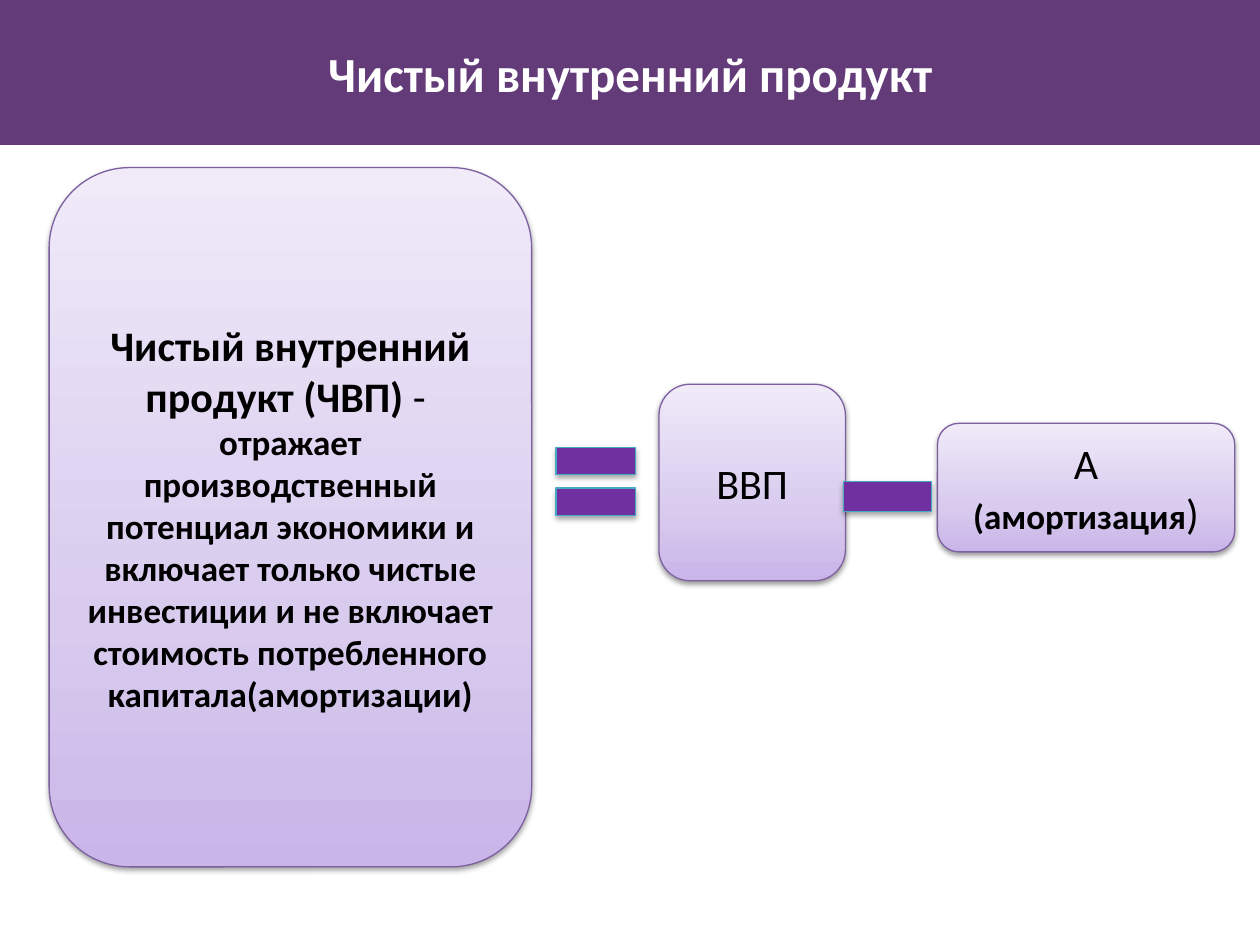
from copy import deepcopy

from lxml import etree
from pptx import Presentation
from pptx import util as u
from pptx.dml.color import RGBColor
from pptx.enum import shapes, text
from pptx.oxml.ns import qn

FONT = "Calibri"
LILAC_STOPS = [(0, "C9B5E8"), (0.35, "D8CBEE"), (1, "F0EAF9")]


def rgb(value):
    return RGBColor.from_string(value)


def place(shape, left, top, width, height):
    shape.left, shape.top = u.Inches(left), u.Inches(top)
    shape.width, shape.height = u.Inches(width), u.Inches(height)


def set_outline(shape, color):
    shape.line.color.rgb = rgb(color)
    shape.line.width = u.Pt(0.75)


def fill_gradient(shape, stops):
    """Fill with stops that run from the bottom edge to the top."""
    shape.fill.gradient()
    shape.fill.gradient_angle = 90
    stop_list = next(shape._element.spPr.iter(qn("a:gsLst")))
    while len(stop_list) < len(stops):
        stop_list.append(deepcopy(stop_list[-1]))
    for stop, (position, color) in zip(shape.fill.gradient_stops, stops):
        stop.position = position
        stop.color.rgb = rgb(color)


def drop_shadow(shape, distance, opacity):
    """Cast a soft black shadow straight down."""
    shape.shadow.inherit = False
    effects = shape._element.spPr.find(qn("a:effectLst"))
    shadow = etree.SubElement(
        effects, qn("a:outerShdw"), blurRad=str(u.Pt(3.1)),
        dist=str(u.Pt(distance)), dir="5400000", rotWithShape="0")
    black = etree.SubElement(shadow, qn("a:srgbClr"), val="000000")
    etree.SubElement(black, qn("a:alpha"), val=str(opacity * 1000))


def write(shape, paragraphs, color):
    """Write centred paragraphs, each a list of (words, size, bold) runs."""
    frame = shape.text_frame
    frame.word_wrap = True
    frame.vertical_anchor = text.MSO_ANCHOR.MIDDLE
    for index, runs in enumerate(paragraphs):
        paragraph = frame.add_paragraph() if index else frame.paragraphs[0]
        paragraph.alignment = text.PP_ALIGN.CENTER
        paragraph.font.name = FONT
        paragraph.font.color.rgb = rgb(color)
        for words, size, bold in runs:
            run = paragraph.add_run()
            run.text = words
            run.font.size = u.Pt(size)
            run.font.bold = bold


def add_title(slide, words):
    title = slide.shapes.title
    place(title, 0, 0, 10, 1.15)
    title.fill.solid()
    title.fill.fore_color.rgb = rgb("633B79")
    write(title, [[(words, 28, True)]], "FFFFFF")


def add_term(slide, box, paragraphs):
    term = slide.shapes.add_shape(
        shapes.MSO_SHAPE.ROUNDED_RECTANGLE, *map(u.Inches, box))
    fill_gradient(term, LILAC_STOPS)
    set_outline(term, "7D60A0")
    drop_shadow(term, 1.6, 38)
    write(term, paragraphs, "000000")


def add_operator(slide, sign, box):
    operator = slide.shapes.add_shape(sign, *map(u.Inches, box))
    operator.fill.solid()
    operator.fill.fore_color.rgb = rgb("7030A0")
    set_outline(operator, "46AAC5")
    drop_shadow(operator, 1.8, 35)


def main():
    deck = Presentation()
    deck.slide_width, deck.slide_height = u.Inches(10), u.Inches(7.5)
    slide = deck.slides.add_slide(deck.slide_layouts[5])

    add_title(slide, "Чистый внутренний продукт")
    add_term(slide, (0.39, 1.33, 3.83, 5.55), [
        [("Чистый внутренний продукт (ЧВП) ", 24, True), ("- ", 24, False)],
        [("отражает производственный потенциал экономики и включает только "
          "чистые инвестиции и не включает стоимость потребленного "
          "капитала(амортизации)", 20, True)],
    ])
    add_term(slide, (7.44, 3.36, 2.36, 1.02), [
        [("А", 24, False)],
        [("(амортизация", 20, True), (")", 24, False)],
    ])
    add_term(slide, (5.23, 3.05, 1.48, 1.56), [[("ВВП", 24, False)]])
    add_operator(slide, shapes.MSO_SHAPE.MATH_MINUS, (6.57, 3.44, 0.95, 1))
    add_operator(slide, shapes.MSO_SHAPE.MATH_EQUAL, (4.3, 3.36, 0.86, 0.92))

    deck.save("out.pptx")


if __name__ == "__main__":
    main()
